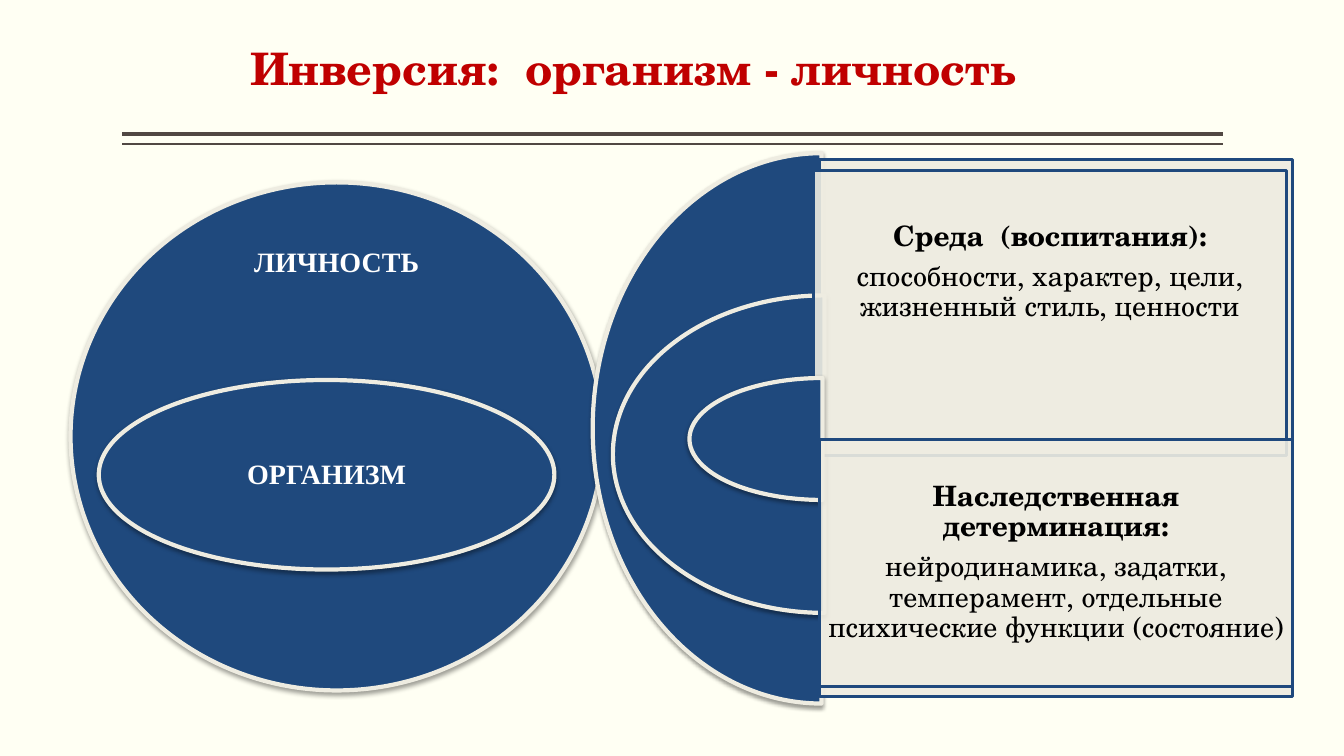
from dataclasses import dataclass

import lxml.etree
import pptx
import pptx.dml.color
import pptx.enum.shapes
import pptx.enum.text
import pptx.oxml
import pptx.oxml.ns
import pptx.shapes.autoshape
import pptx.slide
import pptx.text.text
import pptx.util

RGBColor = pptx.dml.color.RGBColor
IVORY = RGBColor(0xFF, 0xFF, 0xF3)
SAND = RGBColor(0xEE, 0xEC, 0xE1)
NAVY = RGBColor(0x1F, 0x49, 0x7D)
UMBER = RGBColor(0x51, 0x48, 0x43)
CRIMSON = RGBColor(0xC0, 0x00, 0x00)
WHITE = RGBColor(0xFF, 0xFF, 0xFF)
BLACK = RGBColor(0x00, 0x00, 0x00)

SCHOLA = "TeX Gyre Schola"
TIMES = "Times New Roman"
SLIDE_WIDTH = pptx.util.Inches(13.33)
SLIDE_HEIGHT = pptx.util.Inches(7.5)
SHAPES = pptx.enum.shapes.MSO_SHAPE
PANEL_LEFT, PANEL_WIDTH = 60.98, 35.18

SHADOW = (
    f'<a:effectLst {pptx.oxml.ns.nsdecls("a")}>'
    '<a:outerShdw blurRad="39370" dist="20320" dir="5400000" rotWithShape="0">'
    '<a:srgbClr val="000000"><a:alpha val="38000"/></a:srgbClr>'
    "</a:outerShdw></a:effectLst>"
)


@dataclass(frozen=True)
class Area:
    """A region in percent of the slide's width and height."""

    left: float
    top: float
    width: float
    height: float

    def box(self) -> tuple[int, int, int, int]:
        return across(self.left), down(self.top), across(self.width), down(self.height)


@dataclass(frozen=True)
class Figure:
    kind: pptx.enum.shapes.MSO_SHAPE
    area: Area


@dataclass(frozen=True)
class Line:
    text: str
    bold: bool = True


@dataclass(frozen=True)
class Caption:
    area: Area
    lines: tuple[Line, ...]
    font: str
    color: RGBColor


def across(percent: float) -> int:
    return round(SLIDE_WIDTH * percent / 100)


def down(percent: float) -> int:
    return round(SLIDE_HEIGHT * percent / 100)


# Circles of the left model, then half discs and panels of the right one, back to front
FIGURES = (
    Figure(SHAPES.OVAL, Area(5.25, 24.13, 39.6, 67.2)),
    Figure(SHAPES.OVAL, Area(7.35, 50.27, 33.9, 25.07)),
    Figure(SHAPES.PIE, Area(44.1, 20.27, 34.05, 72.8)),
    Figure(SHAPES.RECTANGLE, Area(PANEL_LEFT, 21.07, PANEL_WIDTH, 71.07)),
    Figure(SHAPES.PIE, Area(45.6, 39.07, 31.5, 42)),
    Figure(SHAPES.RECTANGLE, Area(60.53, 22.53, PANEL_WIDTH, 37.73)),
    Figure(SHAPES.PIE, Area(51.3, 50, 19.8, 16.13)),
    Figure(SHAPES.RECTANGLE, Area(PANEL_LEFT, 58.13, PANEL_WIDTH, 32.67)),
)

CAPTIONS = (
    Caption(Area(17.7, 30.8, 14.7, 8.13), (Line("ЛИЧНОСТЬ"),), TIMES, WHITE),
    Caption(Area(15.83, 58.4, 16.95, 8.93), (Line("ОРГАНИЗМ"),), TIMES, WHITE),
    Caption(
        Area(60.53, 27.33, PANEL_WIDTH, 17.47),
        (
            Line("Среда  (воспитания):"),
            Line("способности, характер, цели, жизненный стиль, ценности", bold=False),
        ),
        SCHOLA,
        BLACK,
    ),
    Caption(
        Area(PANEL_LEFT, 58.13, PANEL_WIDTH, 32.67),
        (
            Line("Наследственная детерминация:"),
            Line(
                "нейродинамика, задатки, темперамент, отдельные "
                "психические функции (состояние)",
                bold=False,
            ),
        ),
        SCHOLA,
        BLACK,
    ),
)


def style_paragraph(
    paragraph: pptx.text.text._Paragraph, font: str, size: float, color: RGBColor, bold: bool
) -> None:
    paragraph.alignment = pptx.enum.text.PP_ALIGN.CENTER
    paragraph.font.name = font
    paragraph.font.size = pptx.util.Pt(size)
    paragraph.font.color.rgb = color
    paragraph.font.bold = bold


def add_title(slide: pptx.slide.Slide, text: str, area: Area) -> None:
    title = slide.shapes.title
    title.left, title.top, title.width, title.height = area.box()
    title.text_frame.text = text
    style_paragraph(title.text_frame.paragraphs[0], SCHOLA, 32, CRIMSON, True)


def add_rule(slide: pptx.slide.Slide, top: float, weight: float) -> None:
    rule = slide.shapes.add_connector(
        pptx.enum.shapes.MSO_CONNECTOR.STRAIGHT, across(9.1), down(top), across(91), down(top)
    )
    rule.line.color.rgb = UMBER
    rule.line.width = pptx.util.Pt(weight)
    lxml.etree.SubElement(rule._element.spPr, pptx.oxml.ns.qn("a:effectLst"))


def add_figure(slide: pptx.slide.Slide, figure: Figure) -> None:
    shape = slide.shapes.add_shape(figure.kind, *figure.area.box())
    is_panel = figure.kind == SHAPES.RECTANGLE
    shape.fill.solid()
    shape.fill.fore_color.rgb = SAND if is_panel else NAVY
    shape.line.color.rgb = NAVY if is_panel else SAND
    shape.line.width = pptx.util.Pt(2 if is_panel else 3)
    properties = shape._element.spPr
    if is_panel:
        shape.shadow.inherit = False
        fill_color = properties.find(pptx.oxml.ns.qn("a:solidFill"))[0]
        lxml.etree.SubElement(fill_color, pptx.oxml.ns.qn("a:alpha"), val="90000")
    else:
        properties.append(pptx.oxml.parse_xml(SHADOW))
    if figure.kind == SHAPES.PIE:
        # Left half of the disc: from 90 to 270 degrees
        shape.adjustments[0] = 54
        shape.adjustments[1] = 162


def add_caption(slide: pptx.slide.Slide, caption: Caption) -> None:
    frame = slide.shapes.add_textbox(*caption.area.box()).text_frame
    frame.word_wrap = True
    frame.vertical_anchor = pptx.enum.text.MSO_ANCHOR.MIDDLE
    frame.margin_left = frame.margin_right = pptx.util.Inches(0.05)
    frame.text = "\n".join(line.text for line in caption.lines)
    for paragraph, line in zip(frame.paragraphs, caption.lines):
        paragraph.line_spacing = 0.9
        paragraph.space_after = pptx.util.Pt(7)
        style_paragraph(paragraph, caption.font, 20, caption.color, line.bold)


def main() -> None:
    presentation = pptx.Presentation()
    presentation.slide_width = SLIDE_WIDTH
    presentation.slide_height = SLIDE_HEIGHT
    slide = presentation.slides.add_slide(presentation.slide_layouts[5])
    slide.background.fill.solid()
    slide.background.fill.fore_color.rgb = IVORY

    # Heading with its double rule
    add_title(slide, "Инверсия:  организм - личность", Area(9.15, 4.67, 75.9, 8.53))
    add_rule(slide, 17.73, 3)
    add_rule(slide, 19.07, 1)

    # Both models and their captions
    for figure in FIGURES:
        add_figure(slide, figure)
    for caption in CAPTIONS:
        add_caption(slide, caption)
    presentation.save("out.pptx")


if __name__ == "__main__":
    main()
